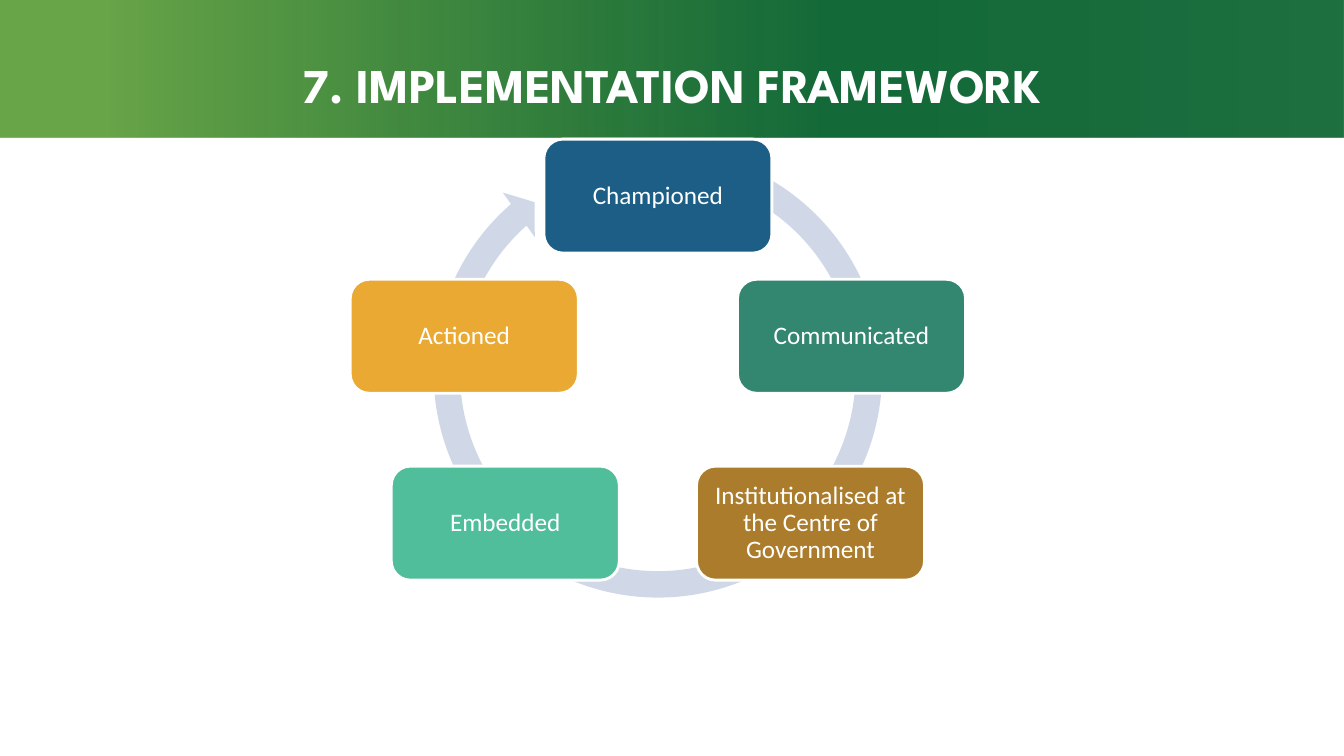
from pptx import Presentation, util as u
from pptx.dml.color import RGBColor
from pptx.enum import shapes, text
from pptx.oxml import parse_xml
from pptx.oxml.ns import nsdecls

WHITE = RGBColor(0xFF, 0xFF, 0xFF)
RING = RGBColor(0xD0, 0xD8, 0xE8)
BLUE = RGBColor(0x1C, 0x5E, 0x85)
TEAL = RGBColor(0x33, 0x87, 0x70)
BROWN = RGBColor(0xAB, 0x7C, 0x2B)
MINT = RGBColor(0x50, 0xBE, 0x9B)
GOLD = RGBColor(0xE9, 0xA9, 0x32)
DEEP = RGBColor(0x00, 0x5D, 0x28)
LEAF = RGBColor(0x68, 0xA4, 0x48)

WIDE, HIGH = 13.33, 7.5
STOPS = [(0, DEEP, 88), (38, DEEP, 92), (92, LEAF, 100)]
ARROW = [0.05544, 3.3068, 137.261, 174.163, 0.05757]
STEPS = [
    ("Championed", BLUE, 0, -0.372),
    ("Communicated", TEAL, 0.406, -0.078),
    ("Institutionalised at the Centre of Government", BROWN, 0.32, 0.314),
    ("Embedded", MINT, -0.32, 0.314),
    ("Actioned", GOLD, -0.406, -0.078),
]


def add(slide, kind, box):
    shape = slide.shapes.add_shape(kind, *map(u.Inches, box))
    shape.shadow.inherit = False
    shape.line.fill.background()
    return shape


def paint(shape, color):
    shape.fill.solid()
    shape.fill.fore_color.rgb = color


def style(para, font, size, bold):
    para.alignment = text.PP_ALIGN.CENTER
    for run in para.runs:
        run.font.name = font
        run.font.size = u.Pt(size)
        run.font.bold = bold
        run.font.color.rgb = WHITE


def fade(shape):
    stops = "".join(
        f'<a:gs pos="{at * 1000}"><a:srgbClr val="{color}">'
        f'<a:alpha val="{alpha * 1000}"/></a:srgbClr></a:gs>'
        for at, color, alpha in STOPS
    )
    grad = parse_xml(
        f'<a:gradFill {nsdecls("a")} rotWithShape="1"><a:gsLst>{stops}</a:gsLst>'
        '<a:lin ang="10800000" scaled="0"/></a:gradFill>'
    )
    shape.fill.background()
    blank = shape.fill._xPr.find("{*}noFill")
    blank.getparent().replace(blank, grad)


def header(slide, box, words):
    left, top, width, height = box
    band = add(slide, shapes.MSO_SHAPE.RECTANGLE, box)
    fade(band)
    slide.shapes._spTree.insert(2, band._element)
    title = slide.shapes.title
    drop = height * 0.22
    title.left, title.top = u.Inches(left), u.Inches(top + drop)
    title.width, title.height = u.Inches(width), u.Inches(height - drop)
    frame = title.text_frame
    frame.text = words
    frame.vertical_anchor = text.MSO_ANCHOR.MIDDLE
    style(frame.paragraphs[0], "League Spartan", 34.6, True)


def node(slide, box, words, color):
    card = add(slide, shapes.MSO_SHAPE.ROUNDED_RECTANGLE, box)
    paint(card, color)
    card.line.color.rgb = WHITE
    card.line.width = u.Pt(2)
    frame = card.text_frame
    frame.text = words
    frame.word_wrap = True
    frame.vertical_anchor = text.MSO_ANCHOR.MIDDLE
    frame.margin_left = frame.margin_right = u.Inches(0.12)
    frame.margin_top = frame.margin_bottom = u.Inches(0.12)
    para = frame.paragraphs[0]
    para.line_spacing = 0.9
    style(para, "Calibri", 18, False)


def cycle(slide, box):
    left, top, size, _ = box
    ring = add(slide, shapes.MSO_SHAPE.CIRCULAR_ARROW, box)
    for index, value in enumerate(ARROW):
        ring.adjustments[index] = value
    paint(ring, RING)
    width = size * 0.478
    height = width / 2
    for words, color, across, down in STEPS:
        x = left + size * (0.5 + across) - width / 2
        y = top + size * (0.5 + down) - height / 2
        node(slide, (x, y, width, height), words, color)


def main():
    deck = Presentation()
    deck.slide_width = u.Inches(WIDE)
    deck.slide_height = u.Inches(HIGH)
    slide = deck.slides.add_slide(deck.slide_layouts[5])
    header(slide, (0, 0, WIDE, 1.37), "7. IMPLEMENTATION FRAMEWORK")
    cycle(slide, (4.16, 1.34, 4.73, 4.73))
    deck.save("out.pptx")


if __name__ == "__main__":
    main()
